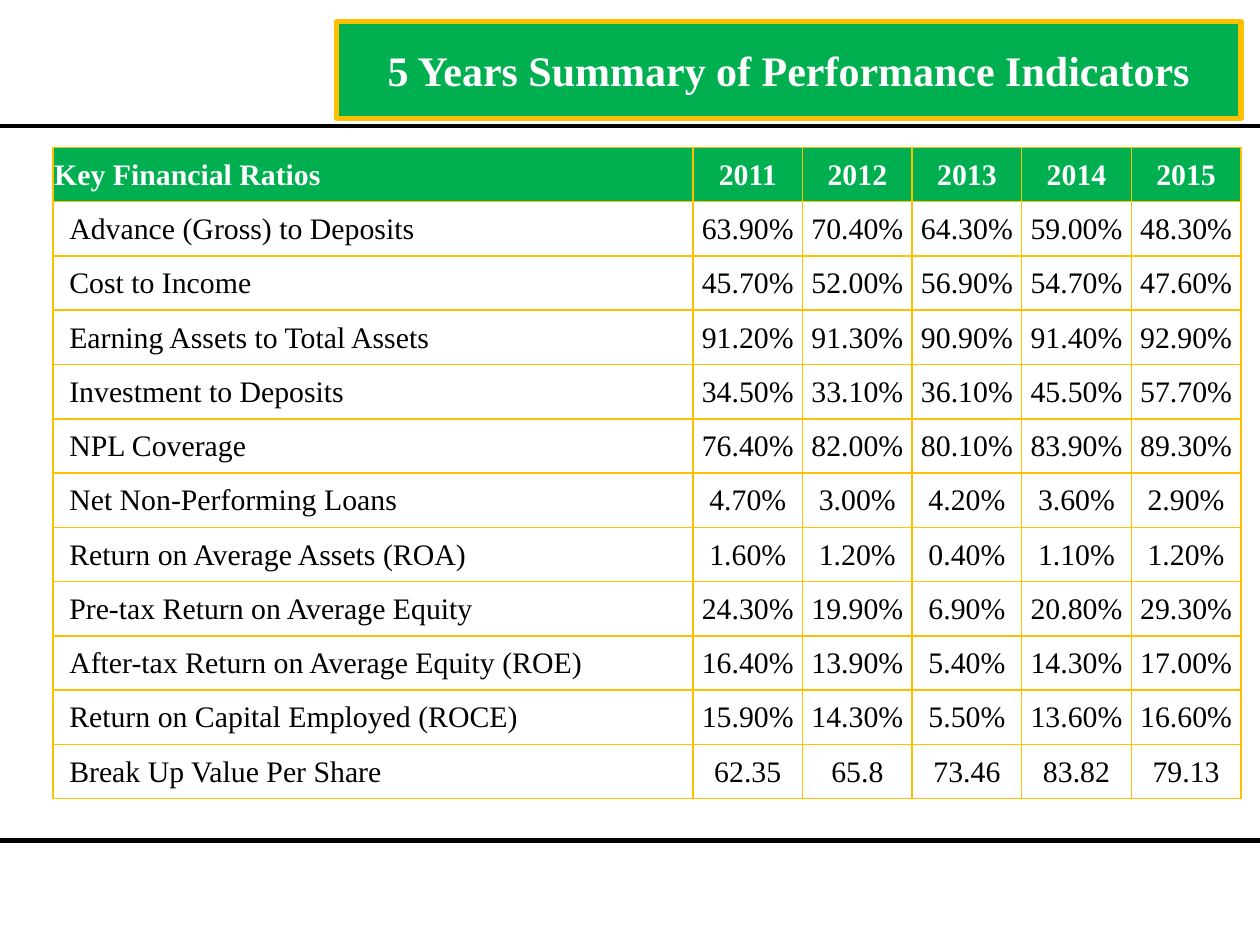
from pptx import Presentation
from pptx.dml.color import RGBColor as RGB
from pptx.enum.shapes import MSO_CONNECTOR as CONN, MSO_SHAPE as SHAPE
from pptx.enum.text import MSO_ANCHOR as ANCHOR, PP_ALIGN as ALIGN
from pptx.oxml.ns import qn
from pptx.util import Inches, Pt
from lxml.etree import SubElement

TITLE = "5 Years Summary of Performance Indicators"
HEADER = ("Key Financial Ratios", "2011", "2012", "2013", "2014", "2015")
RATIOS = [
    ("Advance (Gross) to Deposits", "63.90%", "70.40%", "64.30%", "59.00%", "48.30%"),
    ("Cost to Income", "45.70%", "52.00%", "56.90%", "54.70%", "47.60%"),
    ("Earning Assets to Total Assets", "91.20%", "91.30%", "90.90%", "91.40%", "92.90%"),
    ("Investment to Deposits", "34.50%", "33.10%", "36.10%", "45.50%", "57.70%"),
    ("NPL Coverage", "76.40%", "82.00%", "80.10%", "83.90%", "89.30%"),
    ("Net Non-Performing Loans", "4.70%", "3.00%", "4.20%", "3.60%", "2.90%"),
    ("Return on Average Assets (ROA)", "1.60%", "1.20%", "0.40%", "1.10%", "1.20%"),
    ("Pre-tax Return on Average Equity", "24.30%", "19.90%", "6.90%", "20.80%", "29.30%"),
    ("After-tax Return on Average Equity (ROE)", "16.40%", "13.90%", "5.40%", "14.30%", "17.00%"),
    ("Return on Capital Employed (ROCE)", "15.90%", "14.30%", "5.50%", "13.60%", "16.60%"),
    ("Break Up Value Per Share", "62.35", "65.8", "73.46", "83.82", "79.13"),
]
THEME = {
    "font": "Times New Roman", "title": Pt(24), "body": Pt(17),
    "green": RGB(0x00, 0xB0, 0x50), "gold": RGB(0xFF, 0xC0, 0x00),
    "white": RGB(0xFF, 0xFF, 0xFF), "black": RGB(0, 0, 0),
}
RULES = (6.67, 1)
LEFT, TOP, WIDTH, HEIGHT = 0.42, 1.17, 9.43, 5.17
YEAR_W = 0.87
PAD, INDENT = 0.01, 0.13


def write(tf, text, size, color, bold, align):
    tf.text = text
    p = tf.paragraphs[0]
    p.alignment = align
    font = p.runs[0].font
    font.name, font.size, font.bold = THEME["font"], size, bold
    font.color.rgb = color


def add_rule(s, y):
    line = s.shapes.add_connector(CONN.STRAIGHT, 0, Inches(y), Inches(10), Inches(y))
    line.line.color.rgb = THEME["black"]
    line.line.width = Pt(2.5)
    SubElement(line._element.spPr, qn("a:effectLst"))


def add_borders(cell):
    tc_pr = cell._tc.get_or_add_tcPr()
    for side in ("L", "R", "T", "B"):
        ln = SubElement(tc_pr, qn(f"a:ln{side}"), w=str(Pt(1)))
        fill = SubElement(ln, qn("a:solidFill"))
        SubElement(fill, qn("a:srgbClr"), val=str(THEME["gold"]))


def format_cell(cell, text, is_header, is_label):
    add_borders(cell)
    if is_header:
        cell.fill.solid()
        cell.fill.fore_color.rgb = THEME["green"]
    else:
        cell.fill.background()
    cell.vertical_anchor = ANCHOR.MIDDLE
    cell.margin_left = Inches(INDENT if is_label and not is_header else PAD)
    cell.margin_right = cell.margin_top = Inches(PAD)
    cell.margin_bottom = 0
    write(cell.text_frame, text, THEME["body"], THEME["white" if is_header else "black"],
          is_header, ALIGN.LEFT if is_label else ALIGN.CENTER)


def add_ratio_table(s):
    rows = [HEADER] + RATIOS
    years = len(HEADER) - 1
    table = s.shapes.add_table(len(rows), len(HEADER), Inches(LEFT), Inches(TOP),
                               Inches(WIDTH), Inches(HEIGHT)).table
    table.first_row = table.horz_banding = False
    for i, col in enumerate(table.columns):
        col.width = Inches(YEAR_W if i else WIDTH - years * YEAR_W)
    for r, values in enumerate(rows):
        table.rows[r].height = Inches(HEIGHT / len(rows))
        for c, text in enumerate(values):
            format_cell(table.cell(r, c), text, r == 0, c == 0)


def add_title(s):
    sp = s.shapes.add_shape(SHAPE.RECTANGLE, Inches(2.67), Inches(0.17), Inches(7.18), Inches(0.77))
    sp.shadow.inherit = False
    sp.fill.solid()
    sp.fill.fore_color.rgb = THEME["green"]
    sp.line.color.rgb = THEME["gold"]
    sp.line.width = Pt(3)
    SubElement(sp.line._get_or_add_ln(), qn("a:round"))
    tf = sp.text_frame
    tf.word_wrap = True
    tf.vertical_anchor = ANCHOR.MIDDLE
    write(tf, TITLE, THEME["title"], THEME["white"], True, ALIGN.CENTER)


def main():
    prs = Presentation()
    prs.slide_width, prs.slide_height = Inches(10), Inches(7.5)
    s = prs.slides.add_slide(prs.slide_layouts[6])
    for y in RULES:
        add_rule(s, y)
    add_ratio_table(s)
    add_title(s)
    prs.save("out.pptx")


if __name__ == "__main__":
    main()
